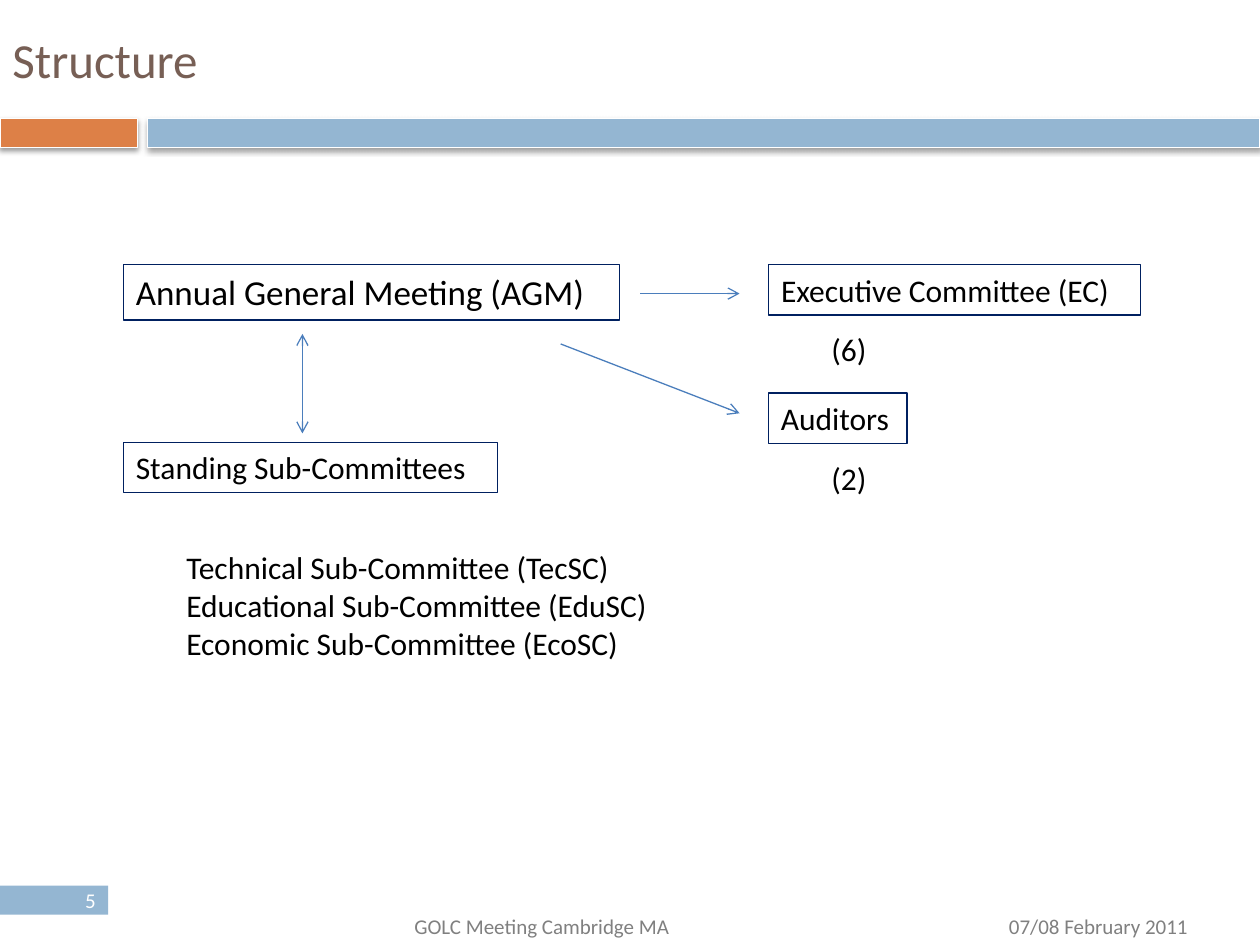
from lxml import etree
from pptx import Presentation
from pptx.dml.color import RGBColor
from pptx.enum.shapes import MSO_CONNECTOR, MSO_SHAPE
from pptx.enum.text import MSO_ANCHOR, PP_ALIGN
from pptx.oxml import parse_xml
from pptx.oxml.ns import nsdecls, qn
from pptx.util import Inches, Pt

RECT = MSO_SHAPE.RECTANGLE
LINE = MSO_CONNECTOR.STRAIGHT
TOP, MID = MSO_ANCHOR.TOP, MSO_ANCHOR.MIDDLE
LEFT, RIGHT = PP_ALIGN.LEFT, PP_ALIGN.RIGHT
FONT = "Calibri"
COLORS = {
    "brown": "775F55", "rust": "DD8047", "sky": "94B6D2", "navy": "002060",
    "blue": "4B7EBC", "gray": "808080", "black": "000000", "white": "FFFFFF",
}


def color(name):
    """Return the named colour."""
    return RGBColor.from_string(COLORS[name])


def write(shape, text, size=18, ink="black", align=LEFT, anchor=TOP):
    """Fill a shape with text, one paragraph per line."""
    frame = shape.text_frame
    frame.word_wrap = True
    frame.vertical_anchor = anchor
    frame.text = text
    for para in frame.paragraphs:
        para.alignment = align
        para.font.name = FONT
        para.font.size = Pt(size)
        para.font.color.rgb = color(ink)


def label(slide, box, text, **format):
    """Add a plain text box."""
    write(slide.shapes.add_textbox(*map(Inches, box)), text, **format)


def block(slide, box, fill=None, edge=None, width=0.75):
    """Add a rectangle with optional fill and edge."""
    shape = slide.shapes.add_shape(RECT, *map(Inches, box))
    shape.shadow.inherit = False
    if fill:
        shape.fill.solid()
        shape.fill.fore_color.rgb = color(fill)
    else:
        shape.fill.background()
    if edge:
        shape.line.color.rgb = color(edge)
        shape.line.width = Pt(width)
    else:
        shape.line.fill.background()
    return shape


def shade(shape):
    """Give a shape a soft shadow below it."""
    effects = shape._element.spPr.find(qn("a:effectLst"))
    effects.append(parse_xml(
        f'<a:outerShdw {nsdecls("a")} blurRad="{Pt(3.1)}" dist="{Pt(1.6)}"'
        ' dir="5400000" rotWithShape="0"><a:srgbClr val="000000">'
        '<a:alpha val="38000"/></a:srgbClr></a:outerShdw>'))


def arrow(slide, start, end, both=False):
    """Add a line with an open arrowhead at its end or at both ends."""
    line = slide.shapes.add_connector(LINE, *map(Inches, (*start, *end)))
    line.line.color.rgb = color("blue")
    line.line.width = Pt(0.75)
    stroke = line.line._get_or_add_ln()
    for tag in ("a:headEnd", "a:tailEnd") if both else ("a:tailEnd",):
        etree.SubElement(stroke, qn(tag), type="arrow")
    etree.SubElement(line._element.spPr, qn("a:effectLst"))


def header(slide, x, y, w, h):
    """Place the title above a two-part band."""
    band, short, gap = 0.23, 1.09, 0.08
    top = h - band
    start = short + gap
    for left, wide, fill in ((0, short, "rust"), (start, w - start, "sky")):
        shade(block(slide, (x + left, y + top, wide, band), fill, "white", 0))
    label(slide, (x, y, 7.89, top), "Structure", size=28, ink="brown", anchor=MID)


def chart(slide, x, y):
    """Place the bodies of the organisation and the arrows between them."""
    right = 5.12
    bodies = (
        (0, 0, 3.94, 0.44, "Annual General Meeting (AGM)", 20),
        (0, 1.41, 2.97, 0.4, "Standing Sub-Committees", 18),
        (right, 0, 2.95, 0.4, "Executive Committee (EC)", 18),
        (right, 1.02, 1.1, 0.4, "Auditors", 18),
    )
    for left, top, wide, high, text, size in bodies:
        body = block(slide, (x + left, y + top, wide, high), edge="navy")
        write(body, text, size=size)
    for top, count in ((0, "(6)"), (1.02, "(2)")):
        label(slide, (x + right + 0.4, y + top + 0.47, 0.49, 0.4), count)
    label(slide, (x + 0.4, y + 2.2, 4.05, 1.01),
          "Technical Sub-Committee (TecSC)\n"
          "Educational Sub-Committee (EduSC)\n"
          "Economic Sub-Committee (EcoSC)")
    arrow(slide, (x + 4.1, y + 0.23), (x + 4.89, y + 0.23))
    arrow(slide, (x + 3.47, y + 0.63), (x + 4.89, y + 1.18))
    arrow(slide, (x + 1.42, y + 0.55), (x + 1.42, y + 1.34), both=True)


def footer(slide, x, y):
    """Place the page number, the event and the date."""
    page = block(slide, (x, y, 0.86, 0.23), "sky")
    write(page, "5", size=12, ink="white", align=RIGHT, anchor=MID)
    notes = ((3.19, 2.33, "GOLC Meeting Cambridge MA"),
             (7.91, 1.7, "07/08 February 2011"))
    for left, wide, text in notes:
        label(slide, (x + left, y + 0.17, wide, 0.3), text, size=12, ink="gray")


def main():
    """Build and save the slide."""
    deck = Presentation()
    deck.slide_width, deck.slide_height = Inches(10), Inches(7.5)
    slide = deck.slides.add_slide(deck.slide_layouts[6])
    header(slide, 0, 0, 10, 1.17)
    chart(slide, 0.98, 2.1)
    footer(slide, 0, 7.03)
    deck.save("out.pptx")


if __name__ == "__main__":
    main()
